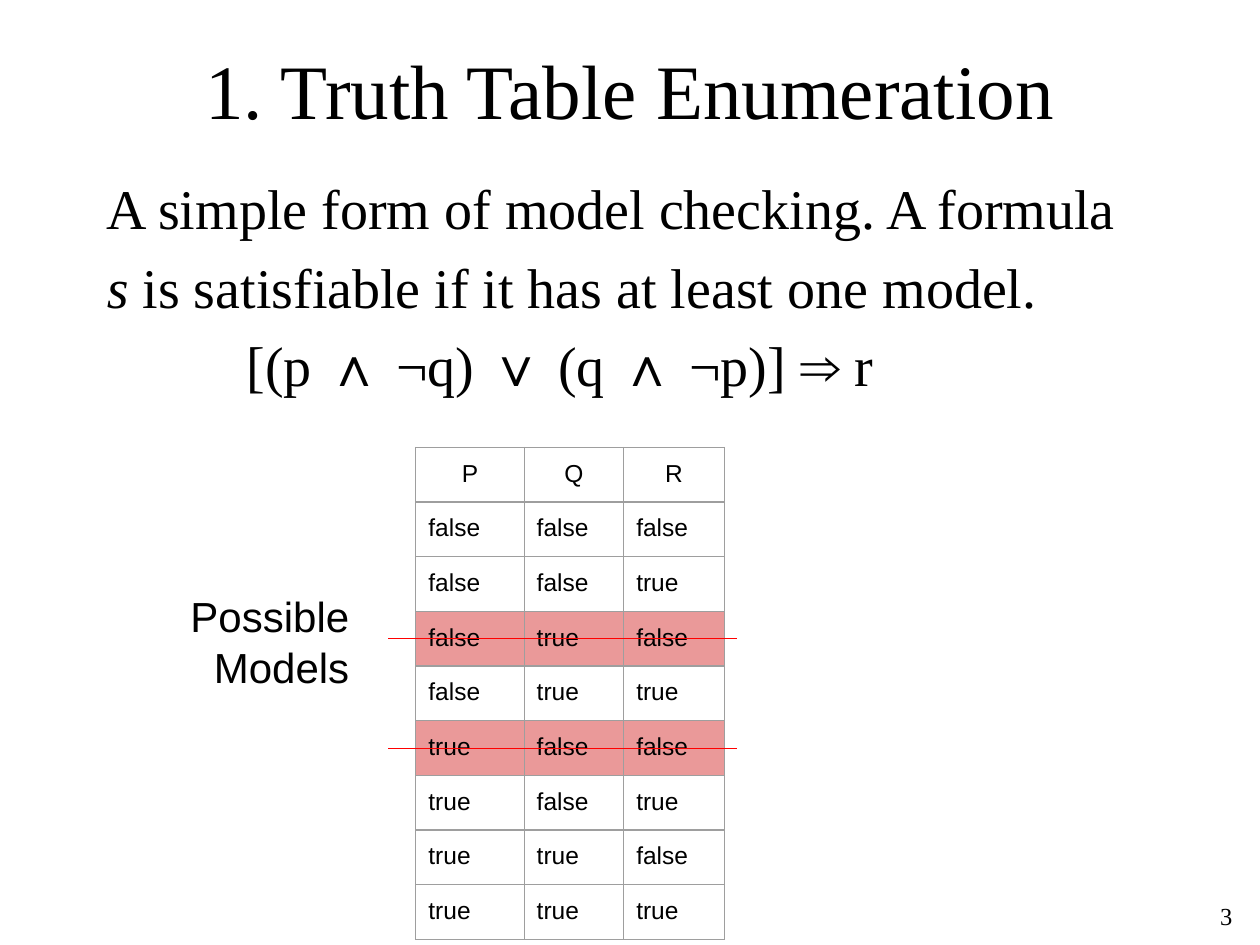
from lxml import etree
from pptx import Presentation
from pptx.dml.color import RGBColor
from pptx.enum.shapes import MSO_CONNECTOR
from pptx.enum.text import MSO_ANCHOR, PP_ALIGN
from pptx.oxml.ns import qn
from pptx.util import Inches, Pt

STRAIGHT = MSO_CONNECTOR.STRAIGHT
TOP, MIDDLE = MSO_ANCHOR.TOP, MSO_ANCHOR.MIDDLE
LEFT, CENTER, RIGHT = PP_ALIGN.LEFT, PP_ALIGN.CENTER, PP_ALIGN.RIGHT
SERIF, SANS = "Times New Roman", "Arial"
COLORS = {"text": "000000", "border": "9E9E9E", "rejected": "EA9999", "strike": "FF0000"}


def format_text(text_frame, font_name, size, alignment):
    for paragraph in text_frame.paragraphs:
        paragraph.alignment = alignment
        for run in paragraph.runs:
            run.font.name = font_name
            run.font.size = Pt(size)
            run.font.color.rgb = RGBColor.from_string(COLORS["text"])


def add_text(box, lines, font_name, size, alignment, anchor=TOP):
    text_frame = slide.shapes.add_textbox(*map(Inches, box)).text_frame
    text_frame.word_wrap = True
    text_frame.vertical_anchor = anchor
    text_frame.text = "\n".join(lines)
    format_text(text_frame, font_name, size, alignment)
    return text_frame


presentation = Presentation()
presentation.slide_width = Inches(10)
presentation.slide_height = Inches(7.5)
slide = presentation.slides.add_slide(presentation.slide_layouts[6])

add_text((0.75, 0.08, 8.5, 1.25), ["1. Truth Table Enumeration"], SERIF, 44, CENTER, MIDDLE)

body = add_text(
    (0.75, 1.33, 8.5, 4.5),
    ["A simple form of model checking. A formula", "", "[(p ∧ ¬q) ∨ (q ∧ ¬p)] ⇒ r"],
    SERIF, 32, LEFT,
)
definition, formula = body.paragraphs[1:]
definition.add_run().text = "s "
definition.add_run().text = "is satisfiable if it has at least one model."
format_text(body, SERIF, 32, LEFT)
definition.runs[0].font.italic = True
for paragraph in body.paragraphs:
    paragraph.space_before = Pt(6.4)
formula_properties = formula._p.get_or_add_pPr()
formula_properties.set("marL", str(Inches(0.5)))
formula_properties.set("indent", str(Inches(0.61)))

add_text((7.8, 7.1, 2.08, 0.28), ["3"], SERIF, 14, RIGHT)

truth_rows = [["P", "Q", "R"]] + [
    [p, q, r] for p in ("false", "true") for q in ("false", "true") for r in ("false", "true")
]
rejected_rows = (3, 5)
table = slide.shapes.add_table(
    len(truth_rows), 3, Inches(3.3), Inches(3.55), Inches(2.45), Inches(3.78)
).table
table.horz_banding = False
for column, width in zip(table.columns, (0.86, 0.79, 0.8)):
    column.width = Inches(width)
for row_index, values in enumerate(truth_rows):
    table.rows[row_index].height = Inches(0.42)
    for column_index, value in enumerate(values):
        cell = table.cell(row_index, column_index)
        cell.text = value
        cell.margin_left = cell.margin_right = Inches(0.1)
        cell.margin_top = cell.margin_bottom = Inches(0.1)
        format_text(cell.text_frame, SANS, 14, CENTER if row_index == 0 else LEFT)
        cell.text_frame.paragraphs[0].runs[0].font.bold = False
        cell_properties = cell._tc.get_or_add_tcPr()
        for side in ("a:lnL", "a:lnR", "a:lnT", "a:lnB"):
            line = etree.SubElement(cell_properties, qn(side), w=str(Pt(0.75)))
            fill = etree.SubElement(line, qn("a:solidFill"))
            etree.SubElement(fill, qn("a:srgbClr"), val=COLORS["border"])
        if row_index in rejected_rows:
            cell.fill.solid()
            cell.fill.fore_color.rgb = RGBColor.from_string(COLORS["rejected"])
        else:
            cell.fill.background()

for y in (5.07, 5.94):
    strike = slide.shapes.add_connector(
        STRAIGHT, Inches(3.08), Inches(y), Inches(5.85), Inches(y)
    )
    strike.line.color.rgb = RGBColor.from_string(COLORS["strike"])
    strike.line.width = Pt(0.75)
    etree.SubElement(strike._element.spPr, qn("a:effectLst"))

label = add_text((1.3, 4.59, 1.57, 1.49), ["Possible", "Models"], SANS, 24, RIGHT)
label.margin_top = label.margin_bottom = Inches(0.1)

presentation.save("out.pptx")
